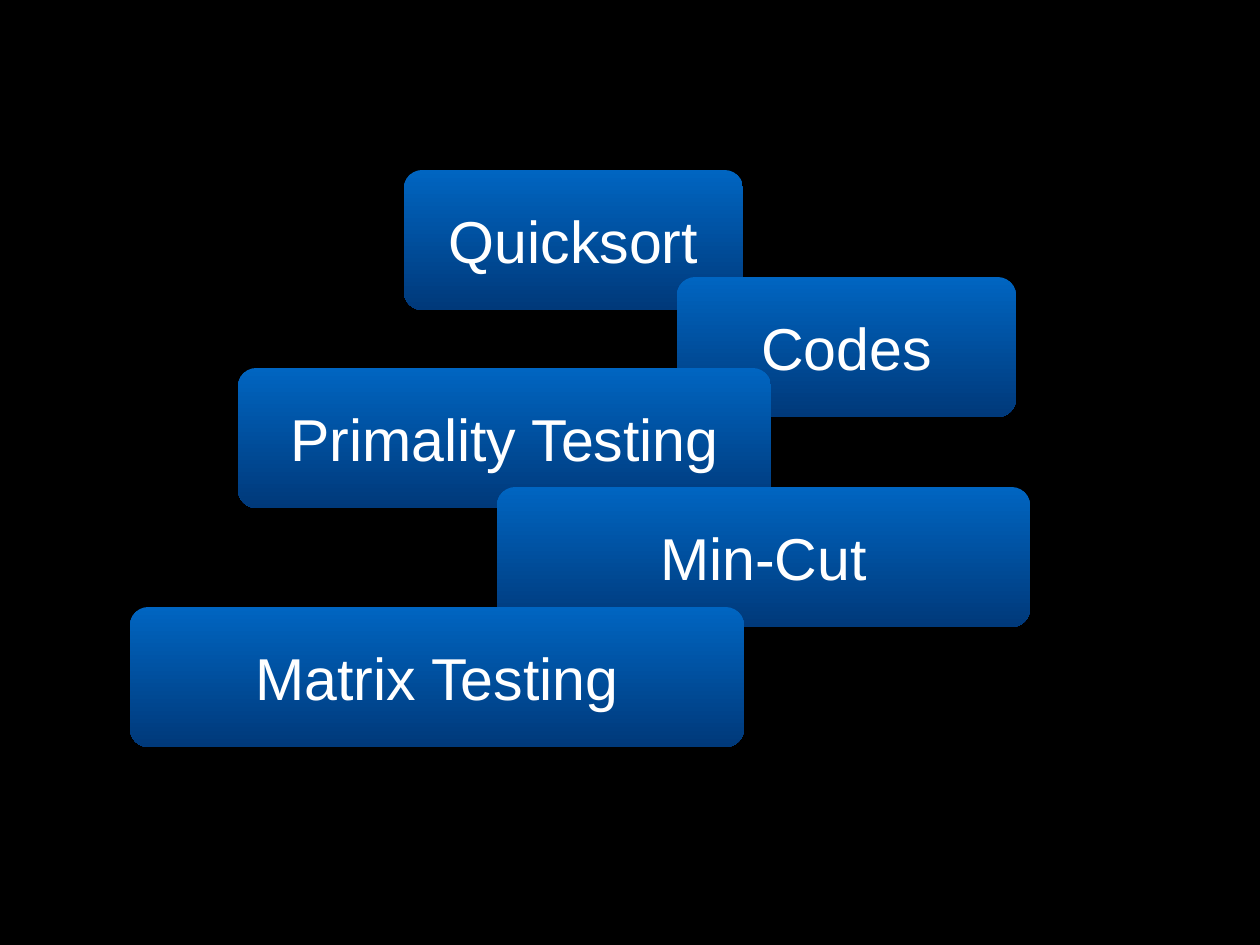
from pptx import Presentation
from pptx.dml.color import RGBColor
from pptx.enum.shapes import MSO_SHAPE
from pptx.enum.text import MSO_ANCHOR, PP_ALIGN
from pptx.util import Pt

TOPICS = [
    ("Quicksort", 404, 170, 339),
    ("Codes", 677, 277, 339),
    ("Primality Testing", 238, 368, 533),
    ("Min-Cut", 497, 487, 533),
    ("Matrix Testing", 130, 607, 614),
]
BOX_HEIGHT = 140
CORNER = 0.13
SLIDE_SIZE = (1260, 945)
EMU_PER_PX = 10320

BLACK = RGBColor(0x00, 0x00, 0x00)
WHITE = RGBColor(0xFF, 0xFF, 0xFF)
BLUE_TOP = RGBColor(0x00, 0x65, 0xC1)
BLUE_BOTTOM = RGBColor(0x00, 0x39, 0x7A)
ROUNDED = MSO_SHAPE.ROUNDED_RECTANGLE
MIDDLE = MSO_ANCHOR.MIDDLE
CENTER = PP_ALIGN.CENTER


def px(n):
    return n * EMU_PER_PX


def add_topic(s, text, left, top, width):
    sp = s.shapes.add_shape(ROUNDED, px(left), px(top), px(width), px(BOX_HEIGHT))
    sp.adjustments[0] = CORNER
    sp.shadow.inherit = False
    sp.line.fill.background()
    sp.fill.gradient()
    sp.fill.gradient_angle = 270
    for stop, position, color in zip(sp.fill.gradient_stops, (0, 1), (BLUE_TOP, BLUE_BOTTOM)):
        stop.position = position
        stop.color.rgb = color
    tf = sp.text_frame
    tf.margin_left = tf.margin_top = tf.margin_right = tf.margin_bottom = 0
    tf.vertical_anchor = MIDDLE
    tf.word_wrap = True
    p = tf.paragraphs[0]
    p.alignment = CENTER
    r = p.add_run()
    r.text = text
    r.font.name = "Arial"
    r.font.size = Pt(48)
    r.font.color.rgb = WHITE


def main():
    prs = Presentation()
    prs.slide_width, prs.slide_height = map(px, SLIDE_SIZE)
    s = prs.slides.add_slide(prs.slide_layouts[6])
    s.background.fill.solid()
    s.background.fill.fore_color.rgb = BLACK
    for topic in TOPICS:
        add_topic(s, *topic)
    prs.save("out.pptx")


if __name__ == "__main__":
    main()
